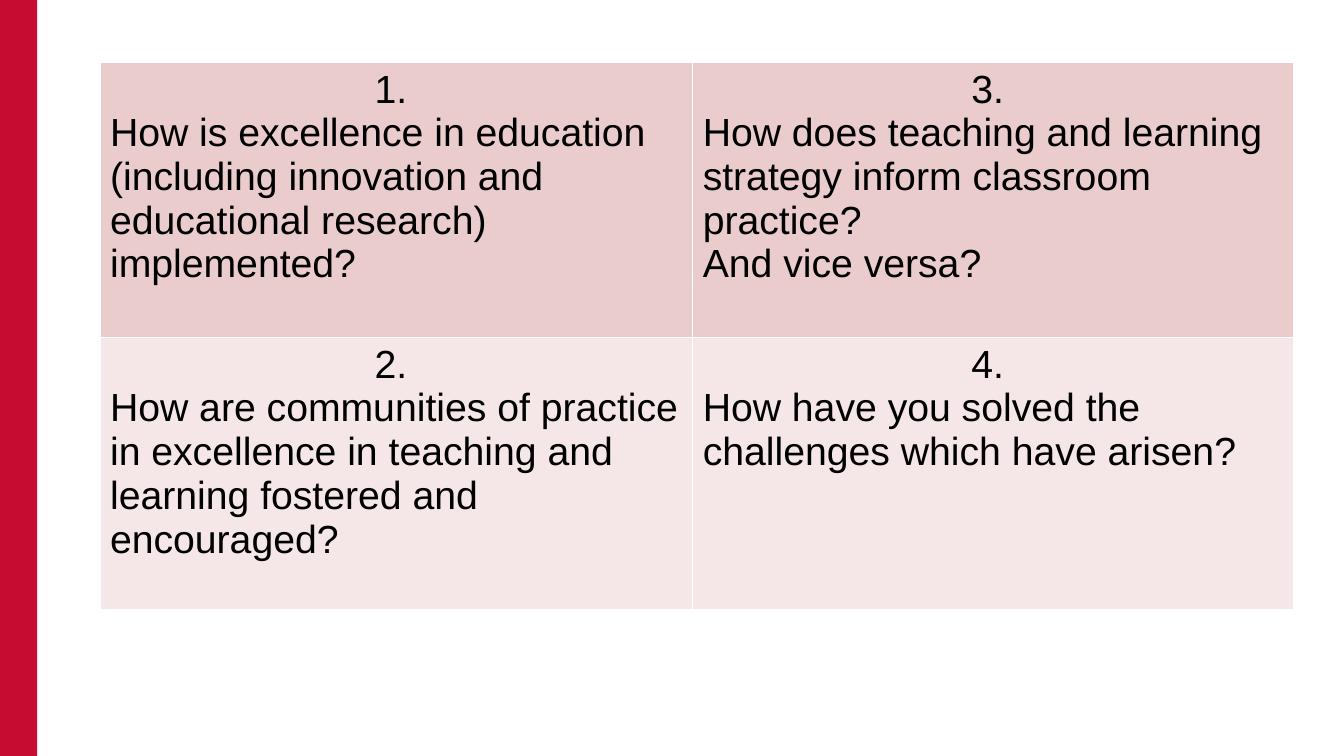
import pptx
import pptx.dml.color
import pptx.enum.shapes
import pptx.enum.text
import pptx.oxml
import pptx.util
from pptx.oxml.ns import nsdecls

Pt = pptx.util.Pt
RGBColor = pptx.dml.color.RGBColor
Align = pptx.enum.text.PP_ALIGN

RED = RGBColor(0xC6, 0x0C, 0x30)
BLACK = RGBColor(0, 0, 0)
WHITE = RGBColor(0xFF, 0xFF, 0xFF)
ROW_FILLS = [RGBColor(0xEA, 0xCC, 0xCD), RGBColor(0xF5, 0xE7, 0xE8)]

COLUMN_WIDTHS = [423.4, 429.1]
ROW_HEIGHTS = [196.5, 194.5]
QUESTIONS = [
    [
        ["1. ", "How is excellence in education (including innovation and "
                "educational research) implemented?"],
        ["3. ", "How does teaching and learning strategy inform classroom practice?",
         "And vice versa?"],
    ],
    [
        ["2. ", "How are communities of practice in excellence in teaching and "
                "learning fostered and encouraged?"],
        ["4. ", "How have you solved the challenges which have arisen?"],
    ],
]


def add_side_bar(page, width, height):
    bar = page.shapes.add_shape(
        pptx.enum.shapes.MSO_SHAPE.RECTANGLE, 0, 0, width, height)
    bar.shadow.inherit = False
    bar.fill.solid()
    bar.fill.fore_color.rgb = RED
    bar.line.fill.background()


def set_borders(cell, color, width):
    properties = cell._tc.get_or_add_tcPr()
    for position, side in enumerate(("lnL", "lnR", "lnT", "lnB")):
        border = pptx.oxml.parse_xml(
            f'<a:{side} {nsdecls("a")} w="{width}"><a:solidFill>'
            f'<a:srgbClr val="{color}"/></a:solidFill></a:{side}>')
        properties.insert(position, border)


def fill_cell(cell, lines, color):
    cell.fill.solid()
    cell.fill.fore_color.rgb = color
    set_borders(cell, WHITE, Pt(1))
    frame = cell.text_frame
    for index, line in enumerate(lines):
        para = frame.add_paragraph() if index else frame.paragraphs[0]
        para.alignment = Align.LEFT if index else Align.CENTER
        span = para.add_run()
        span.text = line
        span.font.name = "Arial"
        span.font.size = Pt(28)
        span.font.color.rgb = BLACK


def add_question_table(page, left, top):
    table = page.shapes.add_table(
        len(ROW_HEIGHTS), len(COLUMN_WIDTHS), left, top,
        Pt(sum(COLUMN_WIDTHS)), Pt(sum(ROW_HEIGHTS))).table
    table.first_row = False
    table.horz_banding = False
    for column, width in zip(table.columns, COLUMN_WIDTHS):
        column.width = Pt(width)
    for row, height, color, questions in zip(
            table.rows, ROW_HEIGHTS, ROW_FILLS, QUESTIONS):
        row.height = Pt(height)
        for cell, lines in zip(row.cells, questions):
            fill_cell(cell, lines, color)


def main():
    deck = pptx.Presentation()
    deck.slide_width = Pt(960)
    deck.slide_height = Pt(540)
    page = deck.slides.add_slide(deck.slide_layouts[6])
    add_side_bar(page, Pt(26.6), deck.slide_height)
    add_question_table(page, Pt(71.4), Pt(44.8))
    deck.save("out.pptx")


if __name__ == "__main__":
    main()
